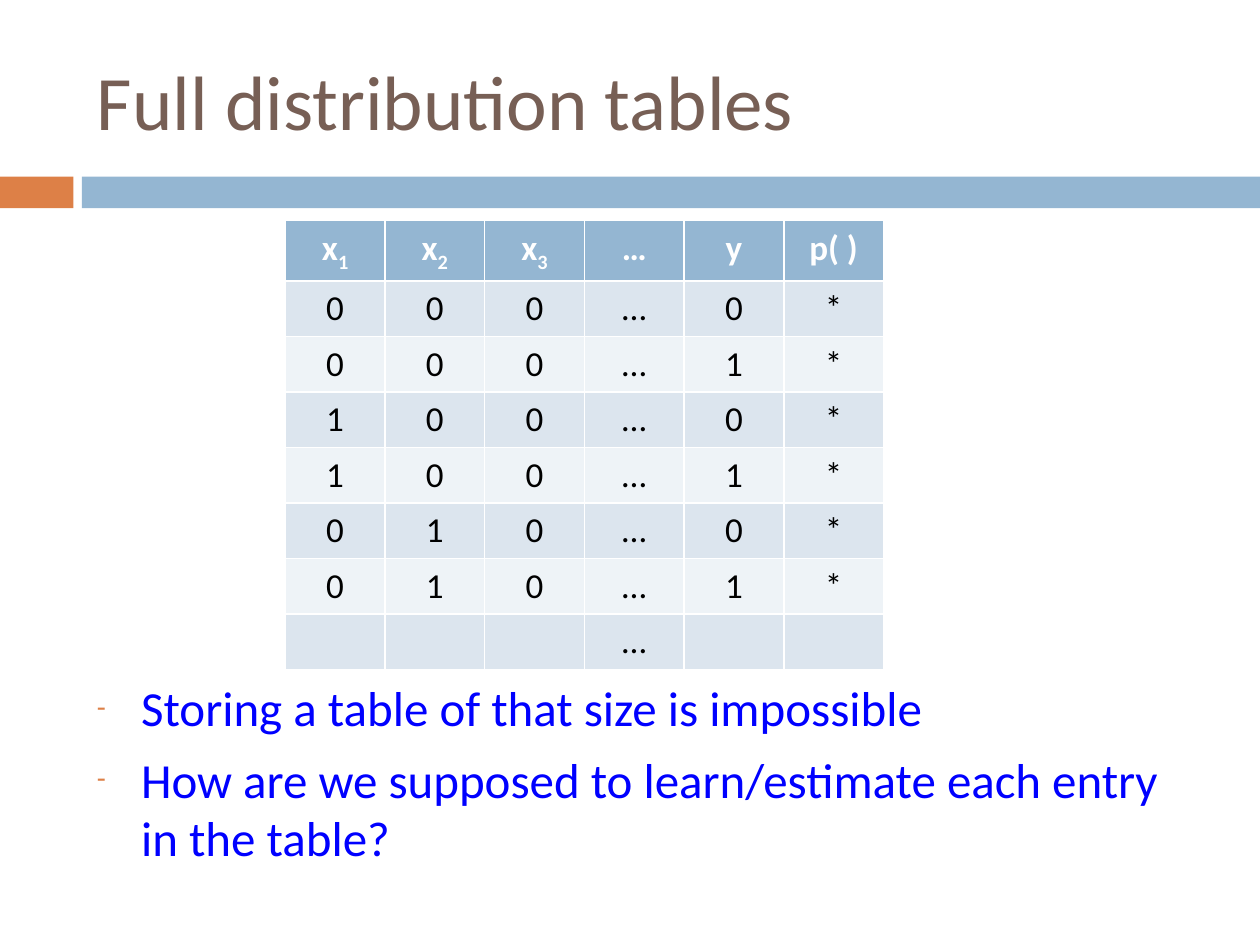
from lxml import etree
from pptx import Presentation
from pptx.dml.color import RGBColor
from pptx.enum.shapes import MSO_SHAPE
from pptx.enum.text import MSO_ANCHOR, MSO_AUTO_SIZE, PP_ALIGN
from pptx.oxml.ns import qn
from pptx.util import Cm, Pt

RECTANGLE = MSO_SHAPE.RECTANGLE
MIDDLE, TOP = MSO_ANCHOR.MIDDLE, MSO_ANCHOR.TOP
NO_AUTOFIT = MSO_AUTO_SIZE.NONE
LEFT, CENTER = PP_ALIGN.LEFT, PP_ALIGN.CENTER

COLORS = {
    "title": "775F55", "accent": "DD8047", "band": "94B6D2",
    "odd": "DCE5EE", "even": "EEF3F7",
    "white": "FFFFFF", "black": "000000", "points": "0000FF",
}


def color(name):
    return RGBColor.from_string(COLORS[name])


def add_text(paragraph, text, size, fill, bold=False, align=LEFT, subscript=False):
    paragraph.alignment = align
    run = paragraph.add_run()
    run.text = text
    run.font.name = "Calibri"
    run.font.size = Pt(size)
    run.font.bold = bold
    run.font.color.rgb = color(fill)
    if subscript:
        run._r.get_or_add_rPr().set("baseline", "-25000")


prs = Presentation()
prs.slide_width, prs.slide_height = Cm(25.4), Cm(19.05)
slide = prs.slides.add_slide(prs.slide_layouts[1])
title, points = slide.placeholders

# Title and list areas
for area, top, height, anchor in ((title, 0.64, 2.74, MIDDLE), (points, 13.54, 4.45, TOP)):
    area.left, area.top, area.width, area.height = Cm(1.7), Cm(top), Cm(22.66), Cm(height)
    area.text_frame.auto_size = NO_AUTOFIT
    area.text_frame.vertical_anchor = anchor
add_text(title.text_frame.paragraphs[0], "Full distribution tables", size=44, fill="title")

# Bars under the title
for left, width, fill in ((0, 1.48, "accent"), (1.65, 23.75, "band")):
    bar = slide.shapes.add_shape(RECTANGLE, Cm(left), Cm(3.56), Cm(width), Cm(0.64))
    bar.shadow.inherit = False
    bar.fill.solid()
    bar.fill.fore_color.rgb = color(fill)
    bar.line.fill.background()

# Distribution table; a header is a name and its subscript
headers = [("x", "1"), ("x", "2"), ("x", "3"), ("…", ""), ("y", ""), ("p( )", "")]
assignments = ["000", "100", "010"]
rows = [[*x, "…", y, "*"] for x in assignments for y in "01"]
rows.append(["", "", "", "…", "", ""])

table = slide.shapes.add_table(
    len(rows) + 1, len(headers), Cm(5.75), Cm(4.45), Cm(12.06), Cm(8.32)).table

for column, (name, index) in enumerate(headers):
    cell = table.cell(0, column)
    cell.fill.solid()
    cell.fill.fore_color.rgb = color("band")
    heading = cell.text_frame.paragraphs[0]
    add_text(heading, name, size=20, fill="white", bold=True, align=CENTER)
    if index:
        add_text(heading, index, size=20, fill="white", bold=True, align=CENTER, subscript=True)

for number, values in enumerate(rows, start=1):
    for column, value in enumerate(values):
        cell = table.cell(number, column)
        cell.fill.solid()
        cell.fill.fore_color.rgb = color("odd" if number % 2 else "even")
        if value:
            add_text(cell.text_frame.paragraphs[0], value, size=20, fill="black", align=CENTER)

# Points below the table, with dashes as bullets
questions = [
    "Storing a table of that size is impossible",
    "How are we supposed to learn/estimate each entry in the table?",
]
for number, question in enumerate(questions):
    frame = points.text_frame
    point = frame.add_paragraph() if number else frame.paragraphs[0]
    add_text(point, question, size=28, fill="points")
    point.space_before = Pt(7)
    properties = point._p.get_or_add_pPr()
    properties.set("marL", str(Cm(0.89)))
    properties.set("indent", str(Cm(-0.89)))
    bullet_color = etree.SubElement(properties, qn("a:buClr"))
    etree.SubElement(bullet_color, qn("a:srgbClr"), val=COLORS["accent"])
    etree.SubElement(properties, qn("a:buSzPct"), val="60000")
    etree.SubElement(properties, qn("a:buFont"), typeface="Calibri")
    etree.SubElement(properties, qn("a:buChar"), char="-")

prs.save("out.pptx")
